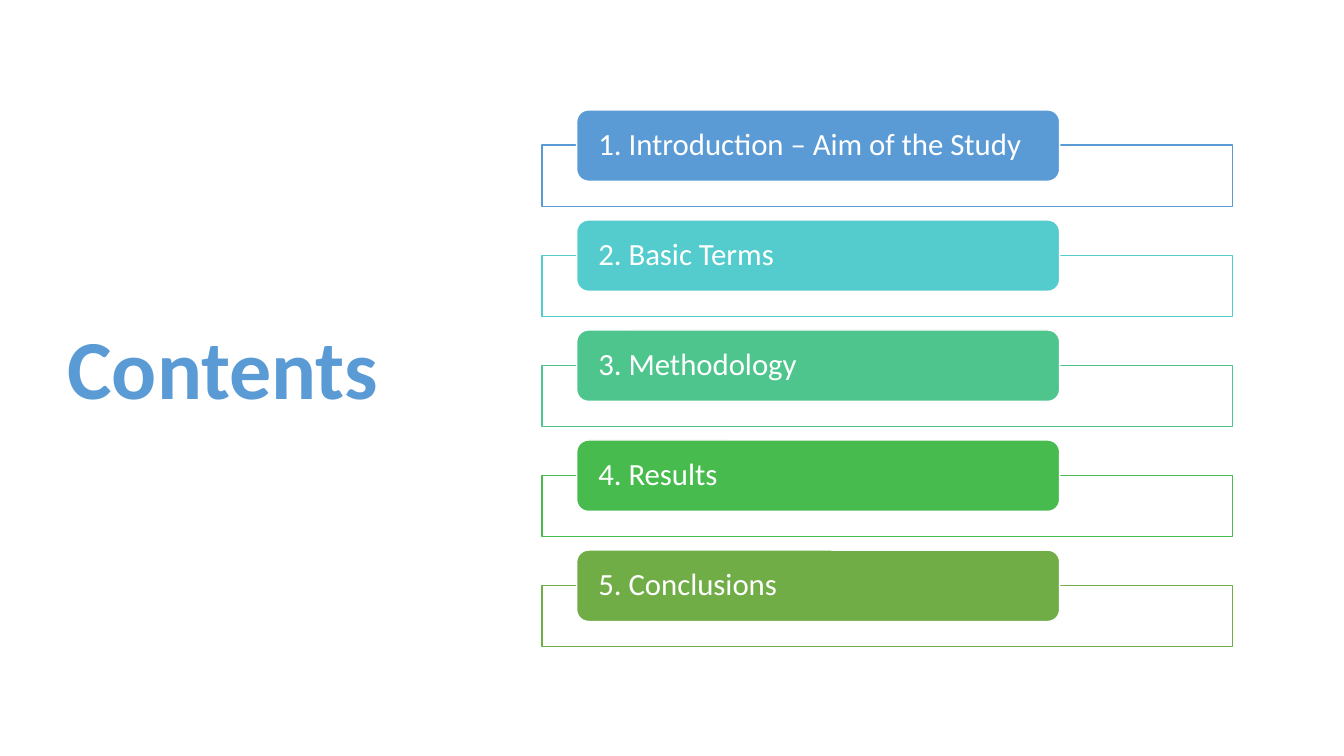
from dataclasses import dataclass

from lxml import etree
from pptx import Presentation
from pptx.dml.color import RGBColor
from pptx.enum import shapes, text
from pptx.oxml import ns
from pptx.shapes.autoshape import Shape
from pptx.slide import Slide
from pptx.util import Pt

FONT = "Calibri"
WHITE = "FFFFFF"
BLUE = "5B9BD5"
FIRST_TOP = 78.5
PITCH = 78.6


@dataclass
class Section:
    label: str
    colour: str


SECTIONS = [
    Section("1. Introduction – Aim of the Study", BLUE),
    Section("2. Basic Terms", "54CCCD"),
    Section("3. Methodology", "4DC58D"),
    Section("4. Results", "48BB4F"),
    Section("5. Conclusions", "70AD47"),
]


def rgb(colour: str) -> RGBColor:
    return RGBColor.from_string(colour)


def add_box(slide: Slide, kind: shapes.MSO_SHAPE, left: float, top: float,
            width: float, height: float, fill: str, line: str) -> Shape:
    shape = slide.shapes.add_shape(kind, Pt(left), Pt(top), Pt(width), Pt(height))
    shape.shadow.inherit = False
    shape.fill.solid()
    shape.fill.fore_color.rgb = rgb(fill)
    shape.line.color.rgb = rgb(line)
    shape.line.width = Pt(1)
    return shape


def set_opacity(shape: Shape, percent: int) -> None:
    colour = shape.fill._xPr.find(ns.qn("a:solidFill"))[0]
    etree.SubElement(colour, ns.qn("a:alpha")).set("val", str(percent * 1000))


def write_text(shape: Shape, content: str, size: float, colour: str, bold: bool) -> None:
    frame = shape.text_frame
    frame.text = content
    frame.word_wrap = True
    frame.auto_size = text.MSO_AUTO_SIZE.NONE
    frame.vertical_anchor = text.MSO_ANCHOR.MIDDLE
    paragraph = frame.paragraphs[0]
    paragraph.alignment = text.PP_ALIGN.LEFT
    paragraph.line_spacing = 0.9
    font = paragraph.runs[0].font
    font.name, font.size, font.bold = FONT, Pt(size), bold
    font.color.rgb = rgb(colour)


def add_section(slide: Slide, section: Section, top: float) -> None:
    """Draw an outlined frame with the section's label tab over its upper edge."""
    frame = add_box(slide, shapes.MSO_SHAPE.RECTANGLE,
                    387.2, top + 25.2, 493.2, 43.8, WHITE, section.colour)
    set_opacity(frame, 90)
    tab = add_box(slide, shapes.MSO_SHAPE.ROUNDED_RECTANGLE,
                  411.9, top, 345, 51, section.colour, WHITE)
    write_text(tab, section.label, 22, WHITE, False)
    tab.text_frame.margin_left = tab.text_frame.margin_right = Pt(13)
    tab.text_frame.margin_top = tab.text_frame.margin_bottom = 0


def main() -> None:
    presentation = Presentation()
    presentation.slide_width, presentation.slide_height = Pt(960), Pt(540)
    slide = presentation.slides.add_slide(presentation.slide_layouts[5])

    title = slide.shapes.title
    title.left, title.top, title.width, title.height = Pt(41), Pt(49), Pt(299.5), Pt(433.5)
    write_text(title, "Contents", 60, BLUE, True)

    for index, section in enumerate(SECTIONS):
        add_section(slide, section, FIRST_TOP + index * PITCH)

    presentation.save("out.pptx")


if __name__ == "__main__":
    main()
